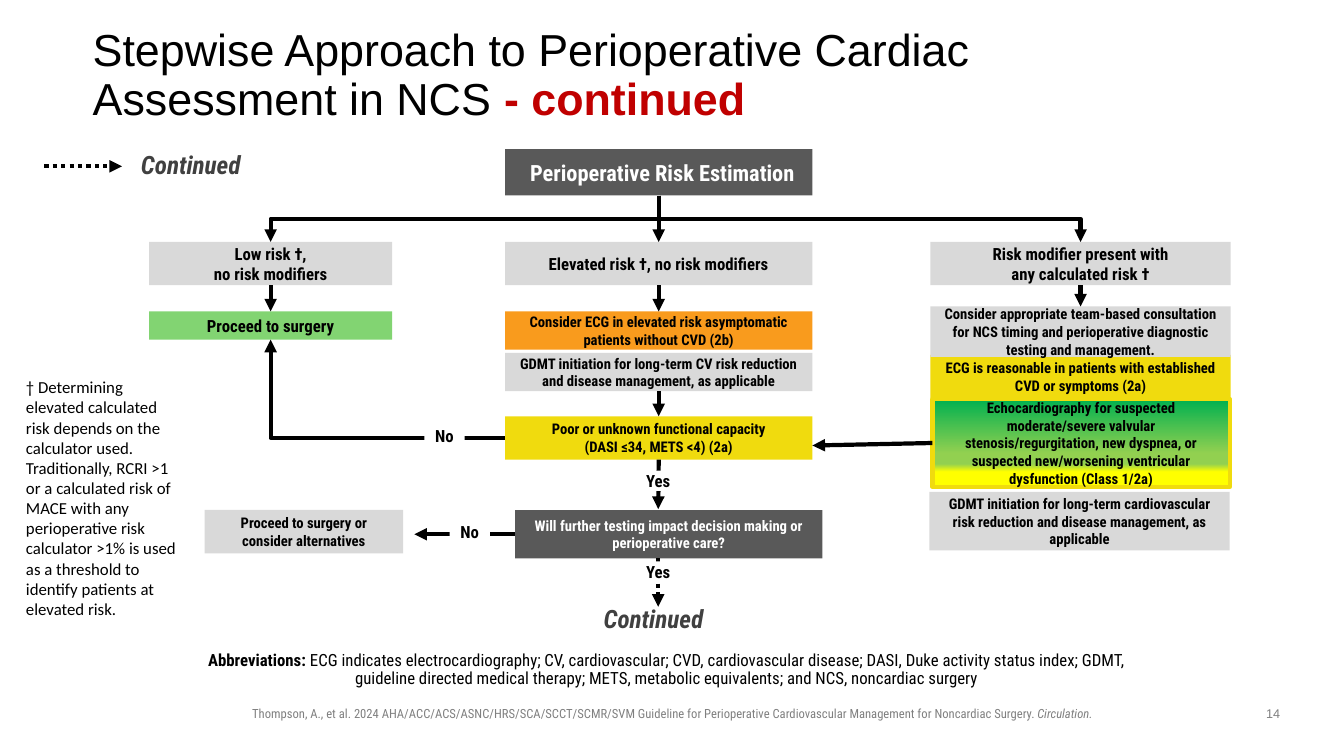
from copy import deepcopy

from lxml.etree import SubElement as Sub
from pptx import Presentation
from pptx.dml.color import RGBColor
from pptx.enum.dml import MSO_LINE as Dash
from pptx.enum.shapes import MSO_CONNECTOR as Link, MSO_SHAPE as Shape
from pptx.enum.text import MSO_ANCHOR as Anchor, MSO_AUTO_SIZE as Auto, PP_ALIGN as Align
from pptx.oxml.ns import qn
from pptx.util import Inches, Pt

CELL = Inches(0.1)  # one column or row of the grid
COLS, ROWS = 133.33, 75
LOW, MID, RISK = (14.8, 24.1), (50.1, 30.5), (92.3, 29.8)  # left, width
AXIS = 65.3
ROW, DEEP = 24, 4.3
BLACK, WHITE, DARK, GREY = "000000", "FFFFFF", "595959", "D9D9D9"
YELLOW, ORANGE, GREEN = "F0DB0E", "F99B1D", "82D472"
BLEND = [(0, "00B050"), (0.62, "92D050"), (0.74, "92D050"), (0.83, "FFFF00"), (1, "FFFF00")]
FONT = "Roboto Condensed"

BOXES = {
    "head": (*MID, 14.8, 4.6, DARK, 16, "Perioperative Risk Estimation"),
    "low": (*LOW, ROW, DEEP, GREY, 12, "Low risk †,\nno risk modifiers"),
    "high": (*MID, ROW, DEEP, GREY, 12, "Elevated risk †, no risk modifiers"),
    "risk": (*RISK, ROW, DEEP, GREY, 12, "Risk modifier present with\nany calculated risk †"),
    "go": (*LOW, 30.9, 2.8, GREEN, 12, "Proceed to surgery"),
    "ecg": (*MID, 30.9, 3.8, ORANGE, 10.5,
            "Consider ECG in elevated risk asymptomatic patients without CVD (2b)"),
    "gdmt": (*MID, 35, 3.8, GREY, 10.5,
             "GDMT initiation for long-term CV risk reduction and disease management, as applicable"),
    "poor": (*MID, 41.3, DEEP, YELLOW, 10.5,
             "Poor or unknown functional capacity\n(DASI ≤34, METS <4) (2a)"),
    "test": (51.1, 30.5, 50.6, 4.8, DARK, 10.5,
             "Will further testing impact decision making or perioperative care?"),
    "other": (20.3, 19.7, 50.6, DEEP, GREY, 10.5, "Proceed to surgery or consider alternatives"),
    "sign": (*RISK, 35.2, DEEP, YELLOW, 10.5,
             "ECG is reasonable in patients with established CVD or symptoms (2a)"),
    "team": (*RISK, 30.4, 5, GREY, 10.5,
             "Consider appropriate team-based consultation for NCS timing and "
             "perioperative diagnostic testing and management."),
    "echo": (92.5, 29.5, 39.6, 8.7, YELLOW, 10.5,
             "Echocardiography for suspected moderate/severe valvular "
             "stenosis/regurgitation, new dyspnea, or suspected new/worsening "
             "ventricular dysfunction (Class 1/2a)"),
    "care": (92.2, 29.8, 48.8, 5.8, GREY, 10.5,
             "GDMT initiation for long-term cardiovascular risk reduction and "
             "disease management, as applicable"),
}


def grid(*cells):
    return [round(n * CELL) for n in cells]


def ink(code):
    return RGBColor.from_string(code)


def put(item, **vals):
    for key, val in vals.items():
        setattr(item, key, val)


def style(run, color=BLACK, **vals):
    put(run.font, **vals)
    run.font.color.rgb = ink(color)


def write(frame, text, tail=None, align=Align.LEFT, anchor=Anchor.TOP, pad=(1, 0.5, 1, 0.5), **font):
    """Fill a frame; tail is a last run with its own format on top of font."""
    left, top, right, low = grid(*pad)
    put(frame, text=text, word_wrap=True, auto_size=Auto.NONE, vertical_anchor=anchor,
        margin_left=left, margin_top=top, margin_right=right, margin_bottom=low)
    for para in frame.paragraphs:
        para.alignment = align
        for run in para.runs:
            style(run, **font)
    if tail:
        run = frame.paragraphs[-1].add_run()
        run.text = tail[0]
        style(run, **{**font, **tail[1]})


def note(slide, x, y, w, h, text, **fmt):
    write(slide.shapes.add_textbox(*grid(x, y, w, h)).text_frame, text, **fmt)


def box(slide, x, w, y, h, fill, size, text, **fmt):
    rect = slide.shapes.add_shape(Shape.RECTANGLE, *grid(x, y, w, h))
    rect.shadow.inherit = False
    rect.fill.solid()
    rect.fill.fore_color.rgb = ink(fill)
    rect.line.fill.background()
    fmt = {"align": Align.CENTER, "anchor": Anchor.MIDDLE, **fmt}
    write(rect.text_frame, text, name=FONT, size=Pt(size), bold=True,
          color=WHITE if fill == DARK else BLACK, **fmt)
    return rect


def label(slide, x, y, text):
    box(slide, x, 4, y, 2, WHITE, 12, text, anchor=Anchor.TOP, pad=(0, 0, 0, 0))


def blend(rect):
    rect.fill.gradient()
    rect.fill.gradient_angle = 270
    stops = rect.element.spPr.find(".//" + qn("a:gsLst"))
    for _ in BLEND[2:]:
        stops.append(deepcopy(stops[0]))
    for stop, (pos, code) in zip(rect.fill.gradient_stops, BLEND):
        stop.position = pos
        stop.color.rgb = ink(code)
    rect.line.color.rgb = ink(YELLOW)
    rect.line.width = Pt(3)


def arrow(slide, start, end, kind=Link.STRAIGHT, dots=False):
    """Each end is a grid point or a (shape, side) pair."""
    free = [isinstance(item[0], (int, float)) for item in (start, end)]
    spots = [grid(*item) if loose else (0, 0) for item, loose in zip((start, end), free)]
    line = slide.shapes.add_connector(kind, *spots[0], *spots[1])
    if not free[0]:
        line.begin_connect(*start)
    if not free[1]:
        line.end_connect(*end)
    line.line.width = Pt(3)
    line.line.color.rgb = ink(BLACK)
    if dots:
        line.line.dash_style = Dash.ROUND_DOT
    props = line.element.spPr
    Sub(props.get_or_add_ln(), qn("a:tailEnd"), type="triangle")
    Sub(props, qn("a:effectLst"))
    return line


def drop(slide, start, end):
    """Elbow that leaves downwards: a turned connector about the same centre."""
    line = arrow(slide, start, end, Link.ELBOW)
    right = line.end_x > line.begin_x
    x, y, w, h = line.left, line.top, line.width, line.height
    put(line, left=x + (w - h) // 2, top=y + (h - w) // 2, width=h, height=w)
    put(line.element.spPr.xfrm, rot=270 if right else 90, flipH=right, flipV=False)


def climb(slide, start, end):
    """Elbow with one corner, going left and then up."""
    line = arrow(slide, start, end, Link.ELBOW)
    props = line.element.spPr
    put(props.xfrm, rot=180, flipH=False, flipV=False)
    props.find(qn("a:prstGeom")).set("prst", "bentConnector2")


def heads(slide):
    title, body = slide.placeholders
    for item, cells in ((title, (9.2, 4, 94.1, 7.2)), (body, (18.8, 64.2, 95.7, 4.6))):
        put(item, **dict(zip(("left", "top", "width", "height"), grid(*cells))))
    write(title.text_frame, "Stepwise Approach to Perioperative Cardiac Assessment in NCS ",
          ("- continued", {"color": "C00000", "bold": True}), anchor=Anchor.MIDDLE,
          pad=(0, 0, 0, 0), name="Arial", size=Pt(32))
    write(body.text_frame, "Abbreviations:",
          (" ECG indicates electrocardiography; CV, cardiovascular; CVD, cardiovascular "
           "disease; DASI, Duke activity status index; GDMT, guideline directed medical "
           "therapy; METS, metabolic equivalents; and NCS, noncardiac surgery", {"bold": False}),
          align=Align.CENTER, anchor=Anchor.BOTTOM, pad=(0, 0.5, 1, 0.5),
          name=FONT, size=Pt(12), bold=True)
    for item in (title, body):
        put(item.text_frame.paragraphs[0], line_spacing=0.9, space_before=Pt(0))
    props = body.text_frame.paragraphs[0]._p.get_or_add_pPr()
    put(props, marL=0, indent=0) if hasattr(props, "marL") else None
    props.set("marL", "0")
    props.set("indent", "0")
    Sub(props, qn("a:buNone"))


def main():
    deck = Presentation()
    deck.slide_width, deck.slide_height = grid(COLS, ROWS)
    slide = deck.slides.add_slide(deck.slide_layouts[1])
    heads(slide)

    parts = {key: box(slide, *vals) for key, vals in BOXES.items()}
    head, poor = parts["head"], parts["poor"]
    head.text_frame.paragraphs[0].alignment = Align.LEFT
    head.text_frame.margin_left = Inches(0.25)
    blend(parts["echo"])

    for key in ("low", "risk"):
        drop(slide, (head, 2), (parts[key], 0))
    for top, low in (("head", "high"), ("low", "go"), ("high", "ecg"),
                     ("risk", "team"), ("gdmt", "poor")):
        arrow(slide, (parts[top], 2), (parts[low], 0))
    arrow(slide, (parts["echo"], 1), (80.6, 44.2))
    arrow(slide, (poor, 2), (AXIS, 50.5))
    arrow(slide, (parts["test"], 1), (41.1, 53))
    climb(slide, (poor, 1), (parts["go"], 2))
    arrow(slide, (AXIS, 55.4), (AXIS, 60.2), dots=True)
    arrow(slide, (4.4, 16.5), (12.1, 16.5), dots=True)

    for x, y, text in ((63.3, 46.7, "Yes"), (42.1, 42.2, "No"),
                       (63.3, 55.7, "Yes"), (44.6, 51.8, "No")):
        label(slide, x, y, text)
    for x, y in ((13, 14.3), (58.9, 59.4)):
        note(slide, x, y, 16, 4, "Continued", name=FONT, size=Pt(18),
             bold=True, italic=True, color="404040")
    note(slide, 1.6, 36.9, 17.3, 25.2,
         "† Determining elevated calculated risk depends on the calculator used. "
         "Traditionally, RCRI >1 or a calculated risk of MACE with any perioperative risk "
         "calculator >1% is used as a threshold to identify patients at elevated risk.",
         name="Calibri", size=Pt(12))
    note(slide, 23.6, 69.5, 86.2, 2.5,
         "Thompson, A., et al. 2024 AHA/ACC/ACS/ASNC/HRS/SCA/SCCT/SCMR/SVM Guideline for "
         "Perioperative Cardiovascular Management for Noncardiac Surgery. ",
         tail=("Circulation.", {"italic": True}), align=Align.CENTER,
         name=FONT, size=Pt(9), color="808080")
    note(slide, 124.2, 69.5, 4.2, 2.6, "14", align=Align.CENTER,
         name="Arial", size=Pt(9), color="808080")
    deck.save("out.pptx")


if __name__ == "__main__":
    main()
